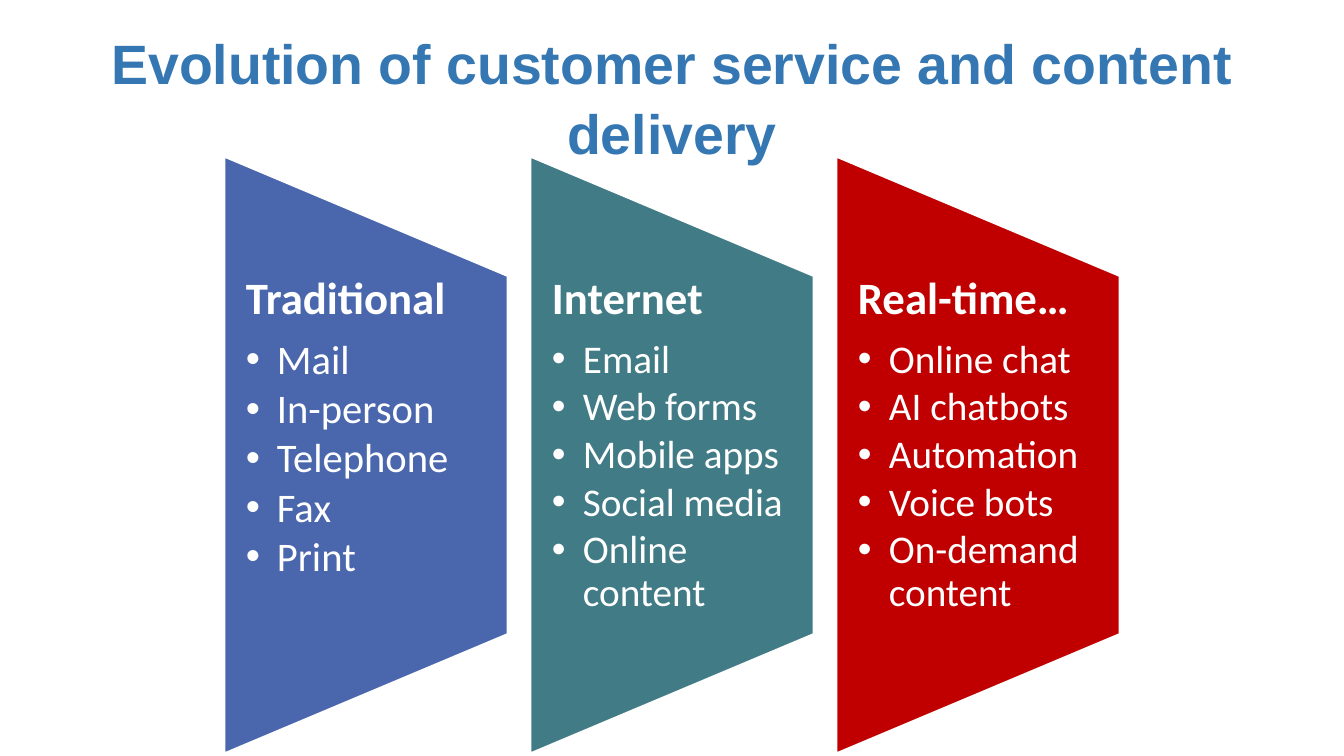
from lxml.etree import SubElement
from pptx import Presentation
from pptx.dml.color import RGBColor
from pptx.enum.shapes import MSO_SHAPE
from pptx.enum.text import MSO_ANCHOR, PP_ALIGN
from pptx.oxml.ns import qn
from pptx.util import Pt

PX = 914400 / 100.8
WHITE = "FFFFFF"
STAGES = [
    ("Traditional", "4A66AC", 29,
     ["Mail", "In-person", "Telephone", "Fax", "Print"]),
    ("Internet", "417B85", 28,
     ["Email", "Web forms", "Mobile apps", "Social media", "Online content"]),
    ("Real-time…", "C00000", 28,
     ["Online chat", "AI chatbots", "Automation", "Voice bots", "On-demand content"]),
]


def px(n):
    return round(n * PX)


def color(value):
    return RGBColor.from_string(value)


def style(p, size, fill, font, bold=False):
    for r in p.runs:
        r.font.size = Pt(size)
        r.font.name = font
        r.font.bold = bold
        r.font.color.rgb = color(fill)


def add_bullet(p, indent):
    pPr = p._p.get_or_add_pPr()
    pPr.set("marL", str(px(indent)))
    pPr.set("indent", str(-px(indent)))
    SubElement(pPr, qn("a:buFont")).set("typeface", "Arial")
    SubElement(pPr, qn("a:buChar")).set("char", "•")


def add_title(s, x, y, w, h, text):
    tf = s.shapes.add_textbox(px(x), px(y), px(w), px(h)).text_frame
    tf.word_wrap = True
    tf.vertical_anchor = MSO_ANCHOR.MIDDLE
    p = tf.paragraphs[0]
    p.text = text
    p.alignment = PP_ALIGN.CENTER
    p.line_spacing = 1.04
    style(p, 39.6, "3477B2", "Arial", True)


def add_stage(s, x, y, w, h, heading, fill, size, items):
    sp = s.shapes.add_shape(MSO_SHAPE.FLOWCHART_MANUAL_OPERATION,
                            px(x + (w - h) / 2), px(y + (h - w) / 2), px(h), px(w))
    sp.rotation = 270
    sp.shadow.inherit = False
    sp.fill.solid()
    sp.fill.fore_color.rgb = color(fill)
    sp.line.color.rgb = color(WHITE)
    sp.line.width = Pt(2)

    tf = s.shapes.add_textbox(px(x), px(y + h / 5), px(w), px(h * 3 / 5)).text_frame
    tf.word_wrap = True
    tf.margin_left = tf.margin_right = px(22)
    tf.margin_top = tf.margin_bottom = 0
    p = tf.paragraphs[0]
    p.text = heading
    p.line_spacing = 0.9
    p.space_after = Pt(11)
    style(p, 32, WHITE, "Calibri", True)
    for item in items:
        p = tf.add_paragraph()
        p.text = item
        p.level = 1
        p.line_spacing = 0.9
        p.space_after = Pt(3.8)
        add_bullet(p, 31)
        style(p, size, WHITE, "Calibri")


def add_stages(s, x, y, w, h, gap):
    for i, stage in enumerate(STAGES):
        add_stage(s, x + i * (w + gap), y, w, h, *stage)


def main():
    prs = Presentation()
    prs.slide_width, prs.slide_height = px(1344), px(756)
    s = prs.slides.add_slide(prs.slide_layouts[6])
    add_title(s, 67, 33, 1210, 126, "Evolution of customer service and content delivery")
    add_stages(s, 224, 156, 284, 598, 22)
    prs.save("out.pptx")


if __name__ == "__main__":
    main()
